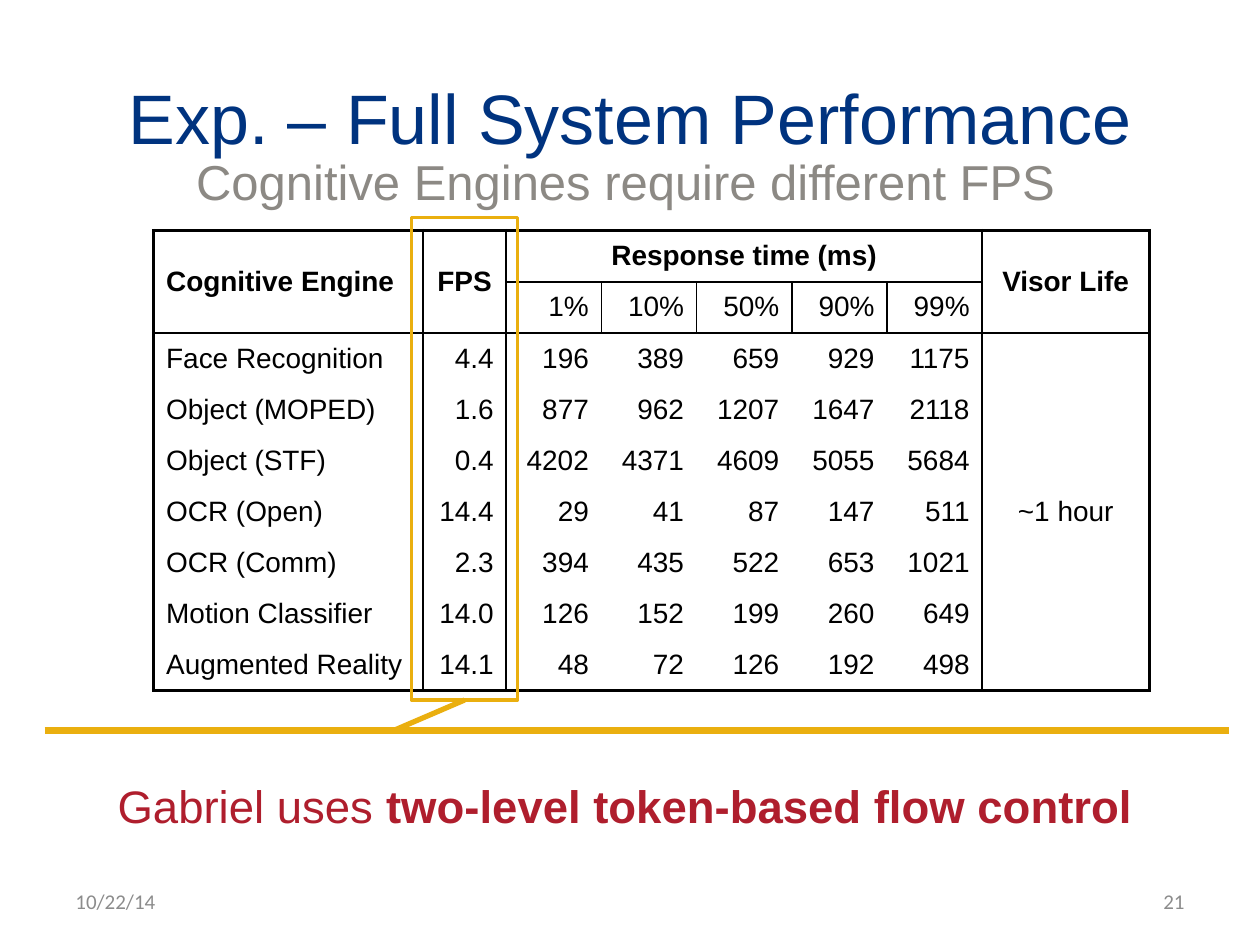
from dataclasses import dataclass

from lxml.etree import SubElement
from pptx import Presentation
from pptx.dml.color import RGBColor
from pptx.enum.shapes import MSO_CONNECTOR, MSO_SHAPE
from pptx.enum.text import MSO_ANCHOR, MSO_AUTO_SIZE, PP_ALIGN
from pptx.oxml.ns import qn
from pptx.util import Pt

BLACK, NAVY, RED = "000000", "00337F", "AF1E2D"
GOLD, WARM_GRAY, FOOTER_GRAY = "EAAF0F", "8C8984", "8C8C8C"
LEFT, CENTER, RIGHT = PP_ALIGN.LEFT, PP_ALIGN.CENTER, PP_ALIGN.RIGHT
TOP, MIDDLE = MSO_ANCHOR.TOP, MSO_ANCHOR.MIDDLE
OUTER, INNER = 2.25, 1

# Table content and grid, lengths in points
COLUMN_WIDTHS = [154, 47.5] + [54.4] * 5 + [95.5]
ROW_HEIGHT = 29.2
PERCENTILES = ["1%", "10%", "50%", "90%", "99%"]
ROWS = [
    ["Cognitive Engine", "FPS", "Response time (ms)", "", "", "", "", "Visor Life"],
    ["", "", *PERCENTILES, ""],
    ["Face Recognition", "4.4", "196", "389", "659", "929", "1175", "~1 hour"],
    ["Object (MOPED)", "1.6", "877", "962", "1207", "1647", "2118", ""],
    ["Object (STF)", "0.4", "4202", "4371", "4609", "5055", "5684", ""],
    ["OCR (Open)", "14.4", "29", "41", "87", "147", "511", ""],
    ["OCR (Comm)", "2.3", "394", "435", "522", "653", "1021", ""],
    ["Motion Classifier", "14.0", "126", "152", "199", "260", "649", ""],
    ["Augmented Reality", "14.1", "48", "72", "126", "192", "498", ""],
]
MERGES = [((0, 0), (1, 0)), ((0, 1), (1, 1)), ((0, 2), (0, 6)),
          ((0, 7), (1, 7)), ((2, 7), (8, 7))]


@dataclass
class Box:
    left: float
    top: float
    width: float
    height: float

    def lengths(self) -> list:
        return [Pt(value) for value in (self.left, self.top, self.width, self.height)]


@dataclass
class TextBlock:
    box: Box
    runs: list  # pairs of text and bold
    size: float
    color: str
    font: str = "Arial"
    align: PP_ALIGN = LEFT
    anchor: MSO_ANCHOR = MIDDLE


def rgb(color: str) -> RGBColor:
    return RGBColor.from_string(color)


def apply_format(target, values: dict) -> None:
    for name, value in values.items():
        setattr(target, name, value)


def format_font(font, size: float, color: str, name: str = "Arial", bold: bool = False) -> None:
    apply_format(font, {"size": Pt(size), "name": name, "bold": bold})
    font.color.rgb = rgb(color)


def fill_text(shape, block: TextBlock) -> None:
    left, top, width, height = block.box.lengths()
    apply_format(shape, {"left": left, "top": top, "width": width, "height": height})
    apply_format(shape.text_frame, {
        "word_wrap": True, "auto_size": MSO_AUTO_SIZE.NONE, "vertical_anchor": block.anchor})
    paragraph = shape.text_frame.paragraphs[0]
    apply_format(paragraph, {"alignment": block.align, "space_before": Pt(0)})
    for text, bold in block.runs:
        run = paragraph.add_run()
        run.text = text
        format_font(run.font, block.size, block.color, block.font, bold)


def add_text(slide, block: TextBlock) -> None:
    fill_text(slide.shapes.add_textbox(*block.box.lengths()), block)


def add_line(slide, start: tuple, end: tuple, width: float):
    points = [Pt(value) for value in (*start, *end)]
    connector = slide.shapes.add_connector(MSO_CONNECTOR.STRAIGHT, *points)
    connector.line.color.rgb = rgb(GOLD)
    connector.line.width = Pt(width)
    SubElement(connector._element.spPr, qn("a:effectLst"))
    return connector


def vertical_width(line: int, row: int) -> float:
    """Width of the vertical grid line, 0 where there is none."""
    if line in (0, len(COLUMN_WIDTHS)):
        return OUTER
    return INNER if line in (1, 2, 7) or row == 1 else 0


def horizontal_width(line: int, column: int) -> float:
    """Width of the horizontal grid line, 0 where there is none."""
    if line in (0, len(ROWS)):
        return OUTER
    return INNER if line == 2 or (line == 1 and 2 <= column <= 6) else 0


def set_borders(cell, row: int, column: int) -> None:
    widths = {
        "a:lnL": vertical_width(column, row),
        "a:lnR": vertical_width(column + cell.span_width, row),
        "a:lnT": horizontal_width(row, column),
        "a:lnB": horizontal_width(row + cell.span_height, column),
    }
    properties = cell._tc.get_or_add_tcPr()
    for tag, width in widths.items():
        border = SubElement(properties, qn(tag), w=str(Pt(width)))
        if width:
            fill = SubElement(border, qn("a:solidFill"))
            SubElement(fill, qn("a:srgbClr"), val=BLACK)
        else:
            SubElement(border, qn("a:noFill"))


def cell_alignment(row: int, column: int) -> PP_ALIGN:
    if column == 0:
        return LEFT
    return CENTER if row == 0 or column == 7 else RIGHT


def add_performance_table(slide, left: float, top: float) -> None:
    box = Box(left, top, sum(COLUMN_WIDTHS), ROW_HEIGHT * len(ROWS))
    table = slide.shapes.add_table(len(ROWS), len(COLUMN_WIDTHS), *box.lengths()).table
    apply_format(table, {"first_row": False, "horz_banding": False})
    for column, width in zip(table.columns, COLUMN_WIDTHS):
        column.width = Pt(width)
    for row in table.rows:
        row.height = Pt(ROW_HEIGHT)
    for first, last in MERGES:
        table.cell(*first).merge(table.cell(*last))
    for row, texts in enumerate(ROWS):
        for column, text in enumerate(texts):
            cell = table.cell(row, column)
            if cell.is_spanned:
                continue
            set_borders(cell, row, column)
            cell.fill.background()
            cell.vertical_anchor = MIDDLE
            paragraph = cell.text_frame.paragraphs[0]
            paragraph.alignment = cell_alignment(row, column)
            run = paragraph.add_run()
            run.text = text
            format_font(run.font, 16, BLACK, bold=row == 0)


def main() -> None:
    presentation = Presentation()
    apply_format(presentation, {"slide_width": Pt(720), "slide_height": Pt(540)})
    slide = presentation.slides.add_slide(presentation.slide_layouts[1])

    # Title, subtitle and conclusion
    fill_text(slide.shapes.title, TextBlock(
        Box(36, 21.6, 648, 90), [("Exp. – Full System Performance", False)],
        40, NAVY, align=CENTER))
    conclusion = slide.placeholders[1]
    fill_text(conclusion, TextBlock(
        Box(60, 441, 607, 56),
        [("Gabriel uses ", False), ("two-level token-based flow control", True)],
        26, RED, anchor=TOP))
    properties = conclusion.text_frame.paragraphs[0]._p.get_or_add_pPr()
    apply_format(properties, {"marL": 0, "indent": 0})
    SubElement(properties, qn("a:buNone"))
    add_text(slide, TextBlock(
        Box(105, 82.8, 516, 41), [("Cognitive Engines require different FPS", False)],
        28, WARM_GRAY, anchor=TOP))

    # Date and slide number
    for left, text, align in ((36, "10/22/14", LEFT), (516, "21", RIGHT)):
        add_text(slide, TextBlock(
            Box(left, 500.5, 168, 28.8), [(text, False)], 12, FOOTER_GRAY, "Calibri", align))

    # Table, divider and highlighted FPS column
    add_line(slide, (25.5, 417.5), (702.5, 417.5), 4)
    add_performance_table(slide, 87.8, 131.8)
    highlight = slide.shapes.add_shape(
        MSO_SHAPE.RECTANGLE, *Box(235.2, 124.2, 60.6, 275.8).lengths())
    highlight.shadow.inherit = False
    highlight.fill.background()
    highlight.line.color.rgb = rgb(GOLD)
    highlight.line.width = Pt(2)
    pointer = add_line(slide, (226, 417), (265.5, 400), 3)
    pointer.end_connect(highlight, 2)

    presentation.save("out.pptx")


if __name__ == "__main__":
    main()
